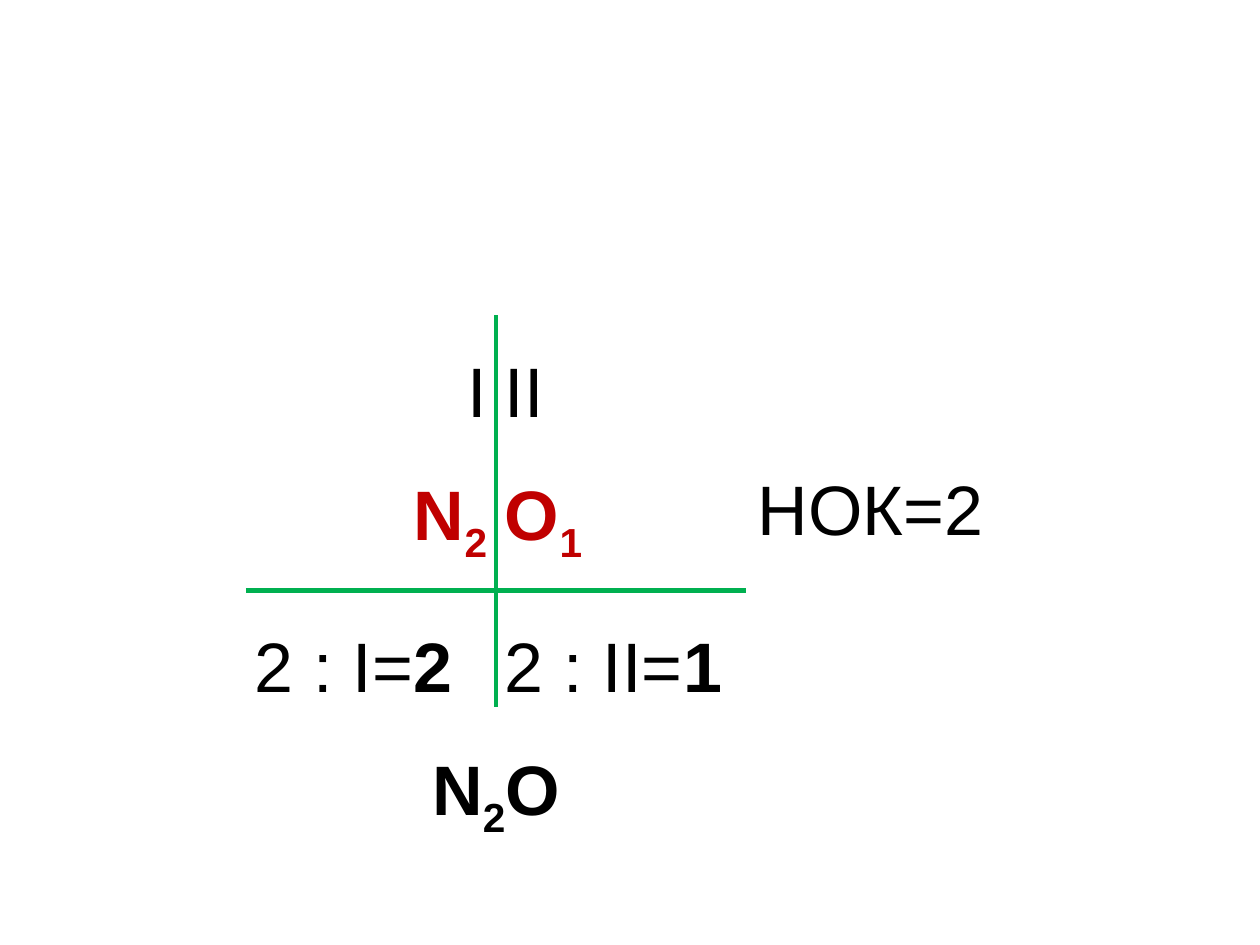
import pptx
import pptx.util
import pptx.dml.color
import pptx.enum.text
import pptx.oxml
import pptx.oxml.ns
import lxml.etree

PX = 914400 // 126
BLACK = pptx.dml.color.RGBColor(0x00, 0x00, 0x00)
RED = pptx.dml.color.RGBColor(0xC0, 0x00, 0x00)
GREEN = pptx.dml.color.RGBColor(0x00, 0xB0, 0x50)
LEFT = pptx.enum.text.PP_ALIGN.LEFT
CENTER = pptx.enum.text.PP_ALIGN.CENTER
RIGHT = pptx.enum.text.PP_ALIGN.RIGHT
TOP = pptx.enum.text.MSO_ANCHOR.TOP
MIDDLE = pptx.enum.text.MSO_ANCHOR.MIDDLE


def add_border(cell, side, visible):
    properties = cell._tc.get_or_add_tcPr()
    line = lxml.etree.SubElement(properties, pptx.oxml.ns.qn("a:ln" + side))
    if visible:
        line.set("w", str(pptx.util.Pt(3)))
        fill = lxml.etree.SubElement(line, pptx.oxml.ns.qn("a:solidFill"))
        color = lxml.etree.SubElement(fill, pptx.oxml.ns.qn("a:srgbClr"))
        color.set("val", str(GREEN))
    else:
        lxml.etree.SubElement(line, pptx.oxml.ns.qn("a:noFill"))


def write_cell(cell, parts, alignment, anchor, spacing, color):
    cell.vertical_anchor = anchor
    paragraph = cell.text_frame.paragraphs[0]
    paragraph.alignment = alignment
    paragraph.line_spacing = spacing
    for text, bold, subscript in parts:
        run = paragraph.add_run()
        run.text = text
        run.font.name = "Arial"
        run.font.size = pptx.util.Pt(40)
        run.font.bold = bold
        run.font.color.rgb = color
        properties = run._r.get_or_add_rPr()
        properties.set("spc", "10")
        if subscript:
            properties.set("baseline", "-25000")


presentation = pptx.Presentation()
presentation.slide_width = pptx.util.Inches(10)
presentation.slide_height = pptx.util.Inches(7.5)
slide = presentation.slides.add_slide(presentation.slide_layouts[6])

table_shape = slide.shapes.add_table(4, 3, 246 * PX, 315 * PX, 750 * PX, 479 * PX)
table = table_shape.table
table.first_row = False
table.horz_banding = False
for column in table.columns:
    column.width = 250 * PX
for row, height in zip(table.rows, (77, 158, 77, 77)):
    row.height = height * PX
table_shape.height = 479 * PX

for row in range(4):
    for column in range(3):
        cell = table.cell(row, column)
        cell.margin_left = cell.margin_right = 9 * PX
        cell.margin_top = cell.margin_bottom = 0
        in_cross = row < 3 and column < 2
        green_sides = {
            "L": in_cross and column == 1,
            "R": in_cross and column == 0,
            "T": in_cross and row == 2,
            "B": in_cross and row == 1,
        }
        for side, visible in green_sides.items():
            add_border(cell, side, visible)
        cell.fill.background()

table.cell(0, 2).merge(table.cell(2, 2))
table.cell(3, 0).merge(table.cell(3, 1))

cells = [
    (0, 0, [("I", False, False)], RIGHT, TOP, 1.5, BLACK),
    (0, 1, [("II", False, False)], LEFT, TOP, 1.5, BLACK),
    (0, 2, [("НОК=2", False, False)], CENTER, MIDDLE, 1.0, BLACK),
    (1, 0, [("N", True, False), ("2", True, True)], RIGHT, TOP, 1.5, RED),
    (1, 1, [("O", True, False), ("1", True, True)], LEFT, TOP, 1.5, RED),
    (2, 0, [("2 : I=", False, False), ("2", True, False)], LEFT, TOP, 1.5, BLACK),
    (2, 1, [("2 : II=", False, False), ("1", True, False)], LEFT, TOP, 1.5, BLACK),
    (3, 0, [("N", True, False), ("2", True, True), ("O", True, False)],
     CENTER, MIDDLE, 1.5, BLACK),
]
for row, column, parts, alignment, anchor, spacing, color in cells:
    write_cell(table.cell(row, column), parts, alignment, anchor, spacing, color)

presentation.save("out.pptx")
